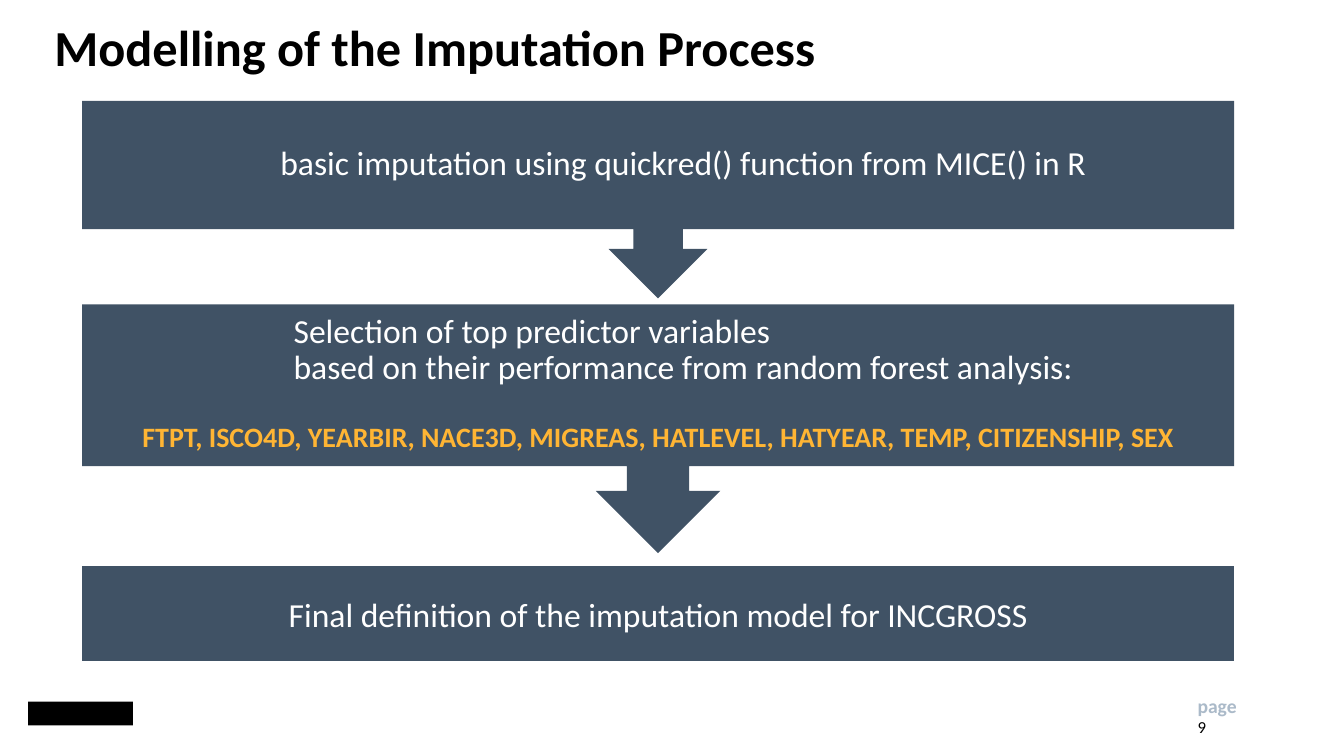
from dataclasses import dataclass

from pptx import Presentation
from pptx.dml.color import RGBColor
from pptx.enum.shapes import MSO_SHAPE
from pptx.enum.text import MSO_ANCHOR, PP_ALIGN
from pptx.util import Cm, Pt

CALLOUT = MSO_SHAPE.DOWN_ARROW_CALLOUT
PROCESS = MSO_SHAPE.FLOWCHART_PROCESS
RECTANGLE = MSO_SHAPE.RECTANGLE
TOP, MIDDLE = MSO_ANCHOR.TOP, MSO_ANCHOR.MIDDLE
LEFT, CENTER = PP_ALIGN.LEFT, PP_ALIGN.CENTER


@dataclass(frozen=True)
class Theme:
    """Colours, font and type sizes of the slide."""
    font: str = "Calibri"
    ink: str = "000000"
    step_fill: str = "405265"
    step_text: str = "FFFFFF"
    accent: str = "FFB534"
    page_label: str = "ABBAC9"
    title_size: int = 36
    step_size: int = 24
    variables_size: int = 20
    label_size: int = 14
    number_size: int = 12


THEME = Theme()


def style_paragraph(paragraph, text, size, color, bold=False, align=LEFT,
                    indent=0, spacing=0.9, before=0):
    """Fill one paragraph and format its run."""
    paragraph.text = text
    paragraph.alignment = align
    paragraph.line_spacing = spacing
    paragraph.space_before = Pt(before)
    paragraph._p.get_or_add_pPr().set("marL", str(Cm(indent)))
    font = paragraph.runs[0].font
    font.name, font.size, font.bold = THEME.font, Pt(size), bold
    font.color.rgb = RGBColor.from_string(color)


def add_label(slide, box, text, size, color, bold=False, spacing=0.9):
    """Place a single-line text without insets in the box."""
    label = slide.shapes.add_textbox(*map(Cm, box))
    frame = label.text_frame
    frame.word_wrap = True
    frame.margin_left = frame.margin_right = 0
    frame.margin_top = frame.margin_bottom = 0
    style_paragraph(frame.paragraphs[0], text, size, color, bold, spacing=spacing)


def add_block(slide, kind, box, fill):
    """Place a plain filled shape in the box."""
    block = slide.shapes.add_shape(kind, *map(Cm, box))
    block.shadow.inherit = False
    block.fill.solid()
    block.fill.fore_color.rgb = RGBColor.from_string(fill)
    block.line.fill.background()
    return block


def add_step(slide, kind, box, lines, anchor=MIDDLE):
    """Place one process step with its lines of text."""
    frame = add_block(slide, kind, box, THEME.step_fill).text_frame
    frame.word_wrap = True
    frame.vertical_anchor = anchor
    if anchor == TOP:
        frame.margin_top = Cm(0.25)
    for index, line in enumerate(lines):
        paragraph = frame.add_paragraph() if index else frame.paragraphs[0]
        style_paragraph(paragraph, **{"size": THEME.step_size,
                                      "color": THEME.step_text, **line})


def add_process(slide, left, top, width):
    """Stack the three steps of the imputation process."""
    add_step(slide, CALLOUT, (left, top, width, 4.98), [
        {"text": "basic imputation using quickred() function from MICE() in R",
         "align": CENTER, "indent": 1.27}])
    add_step(slide, CALLOUT, (left, top + 5.13, width, 6.27), [
        {"text": "Selection of top predictor variables", "indent": 5.08},
        {"text": "based on their performance from random forest analysis:",
         "indent": 5.08},
        {"text": "FTPT, ISCO4D, YEARBIR, NACE3D, MIGREAS, HATLEVEL, HATYEAR, "
                 "TEMP, CITIZENSHIP, SEX",
         "size": THEME.variables_size, "color": THEME.accent, "bold": True,
         "indent": 1.27, "before": 26}], TOP)
    add_step(slide, PROCESS, (left, top + 11.73, width, 2.39), [
        {"text": "Final definition of the imputation model for INCGROSS",
         "align": CENTER, "spacing": 1.0}])


def add_footer(slide, left, top, right):
    """Place the sender's mark and the page number."""
    add_block(slide, RECTANGLE, (left, top + 0.2, 2.64, 0.6), THEME.ink)
    add_label(slide, (right, top, 1.5, 0.5), "page", THEME.label_size,
              THEME.page_label, True, spacing=1.0)
    add_label(slide, (right, top + 0.58, 1.7, 0.7), "9", THEME.number_size,
              THEME.ink, spacing=1.0)


def main():
    """Build and save the slide."""
    deck = Presentation()
    deck.slide_width, deck.slide_height = Cm(33.87), Cm(19.05)
    slide = deck.slides.add_slide(deck.slide_layouts[6])
    add_label(slide, (1.37, 0.58, 31.06, 1.5),
              "Modelling of the Imputation Process",
              THEME.title_size, THEME.ink, True)
    add_process(slide, 2.07, 2.54, 29.03)
    add_footer(slide, 0.71, 17.48, 30.18)
    deck.save("out.pptx")


if __name__ == "__main__":
    main()
